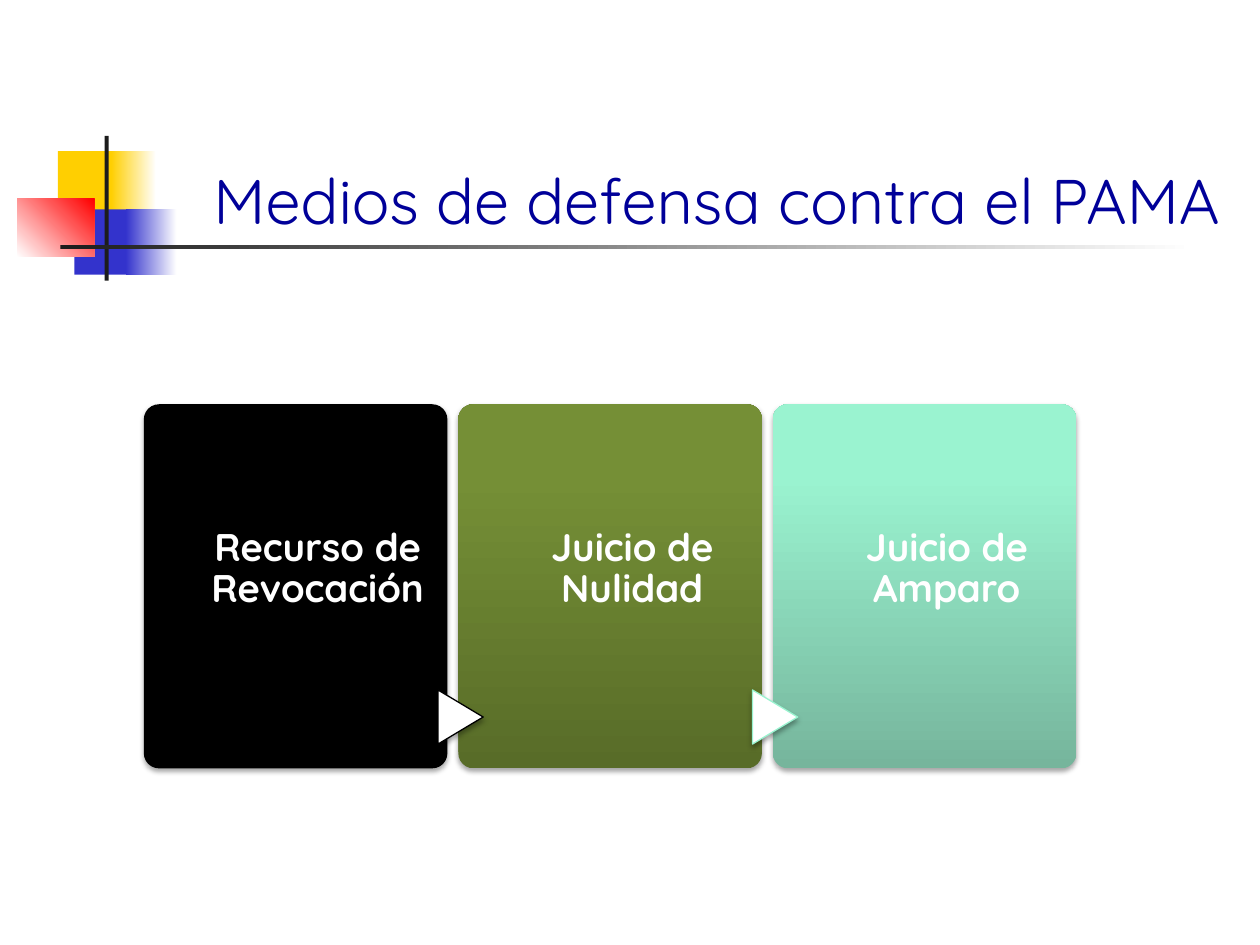
import pptx
import pptx.util
import pptx.dml.color
import pptx.enum.shapes
import pptx.enum.text
import pptx.oxml
import pptx.oxml.ns

Cm, Pt = pptx.util.Cm, pptx.util.Pt
RGBColor = pptx.dml.color.RGBColor
SHAPE = pptx.enum.shapes.MSO_SHAPE
ALIGN = pptx.enum.text.PP_ALIGN
ANCHOR = pptx.enum.text.MSO_ANCHOR

FONT = "Quicksand"
WHITE = RGBColor(0xFF, 0xFF, 0xFF)
BLACK = RGBColor(0, 0, 0)
YELLOW = RGBColor(0xFF, 0xCF, 0x01)
BLUE = RGBColor(0x33, 0x33, 0xCC)
RED = RGBColor(0xFF, 0, 0)
DARK = RGBColor(0x1C, 0x1C, 0x1C)
NAVY = RGBColor(0, 0, 0x99)
MOSS = RGBColor(0x58, 0x6C, 0x28)
OLIVE = RGBColor(0x75, 0x8F, 0x36)
JADE = RGBColor(0x76, 0xB5, 0x9C)
MINT = RGBColor(0x9A, 0xF3, 0xD0)

# Card: text, start colour, end colour, outline of the arrow leading to it
CARDS = [
    ("Recurso de Revocación", BLACK, BLACK, None),
    ("Juicio de Nulidad", MOSS, OLIVE, BLACK),
    ("Juicio de Amparo", JADE, MINT, MINT),
]
LEFT, TOP, WIDTH, HEIGHT, PITCH = 2.9, 8.15, 6.12, 7.34, 6.34


def paint(shape, start, end=None, angle=0, stop=1):
    """Fill solid, or with a gradient whose angle runs counter-clockwise."""
    fill = shape.fill
    if end is None or end == start:
        fill.solid()
        fill.fore_color.rgb = start
        return
    fill.gradient()
    fill.gradient_angle = angle
    first, last = fill.gradient_stops
    first.color.rgb, last.color.rgb = start, end
    first.position, last.position = 0, stop


def add_block(slide, kind, left, top, width, height, *colours, **grade):
    shape = slide.shapes.add_shape(
        kind, Cm(left), Cm(top), Cm(width), Cm(height))
    shape.shadow.inherit = False
    shape.line.fill.background()
    paint(shape, *colours, **grade)
    return shape


def cast(shape):
    """Give the shape a soft shadow below it."""
    effects = shape._element.spPr.find(pptx.oxml.ns.qn("a:effectLst"))
    effects.append(pptx.oxml.parse_xml(
        f'<a:outerShdw {pptx.oxml.ns.nsdecls("a")} blurRad="{Pt(3.1)}" '
        f'dist="{Pt(1.8)}" dir="5400000" rotWithShape="0">'
        '<a:srgbClr val="000000"><a:alpha val="35000"/></a:srgbClr>'
        '</a:outerShdw>'))


def add_text(slide, text, left, top, width, height, size, colour, align):
    box = slide.shapes.add_textbox(Cm(left), Cm(top), Cm(width), Cm(height))
    frame = box.text_frame
    frame.word_wrap = True
    frame.text = text
    para = frame.paragraphs[0]
    para.alignment = align
    font = para.runs[0].font
    font.name, font.size, font.color.rgb = FONT, Pt(size), colour
    return frame


def add_motif(slide):
    rect = SHAPE.RECTANGLE
    add_block(slide, rect, 1.17, 3.05, 1.22, 1.32, YELLOW)
    add_block(slide, rect, 2.24, 3.05, 0.91, 1.32, YELLOW, WHITE)
    add_block(slide, rect, 1.5, 4.22, 1.17, 1.32, BLUE)
    add_block(slide, rect, 2.54, 4.22, 1.02, 1.32, BLUE, WHITE)
    add_block(slide, rect, 0.35, 4.01, 1.55, 1.17, WHITE, RED, angle=45)
    add_block(slide, rect, 2.11, 2.74, 0.08, 2.92, DARK)
    add_block(slide, rect, 1.22, 4.94, 22.86, 0.09, DARK, WHITE)


def add_card(slide, left, text, start, end):
    card = add_block(slide, SHAPE.ROUNDED_RECTANGLE, left, TOP, WIDTH, HEIGHT,
                     start, end, angle=90, stop=0.8)
    card.adjustments[0] = 0.05
    cast(card)


def add_label(slide, left, text):
    frame = add_text(slide, text, left + 1.22, TOP, 4.57, HEIGHT,
                     22, WHITE, ALIGN.CENTER)
    frame.margin_left = frame.margin_right = frame.margin_top = 0
    frame.margin_bottom = Cm(0.68)
    frame.vertical_anchor = ANCHOR.MIDDLE
    para = frame.paragraphs[0]
    para.line_spacing = 0.9
    para.runs[0].font.bold = True


def add_arrow(slide, left, edge):
    arrow = add_block(slide, SHAPE.FLOWCHART_EXTRACT,
                      left - 0.5, 14, 1.09, 0.91, WHITE)
    arrow.rotation = 90
    arrow.line.color.rgb = edge
    arrow.line.width = Pt(0.75)
    cast(arrow)


def main():
    deck = pptx.Presentation()
    deck.slide_width, deck.slide_height = Cm(25.4), Cm(19.05)
    slide = deck.slides.add_slide(deck.slide_layouts[6])
    add_motif(slide)
    title = add_text(slide, "Medios de defensa contra el PAMA",
                     3.2, 1.73, 21.64, 3.17, 36, NAVY, ALIGN.RIGHT)
    title.vertical_anchor = ANCHOR.BOTTOM
    for i, (text, start, end, edge) in enumerate(CARDS):
        left = LEFT + i * PITCH
        add_card(slide, left, text, start, end)
        if edge is not None:
            add_arrow(slide, left, edge)
        add_label(slide, left, text)
    deck.save("out.pptx")


if __name__ == "__main__":
    main()
